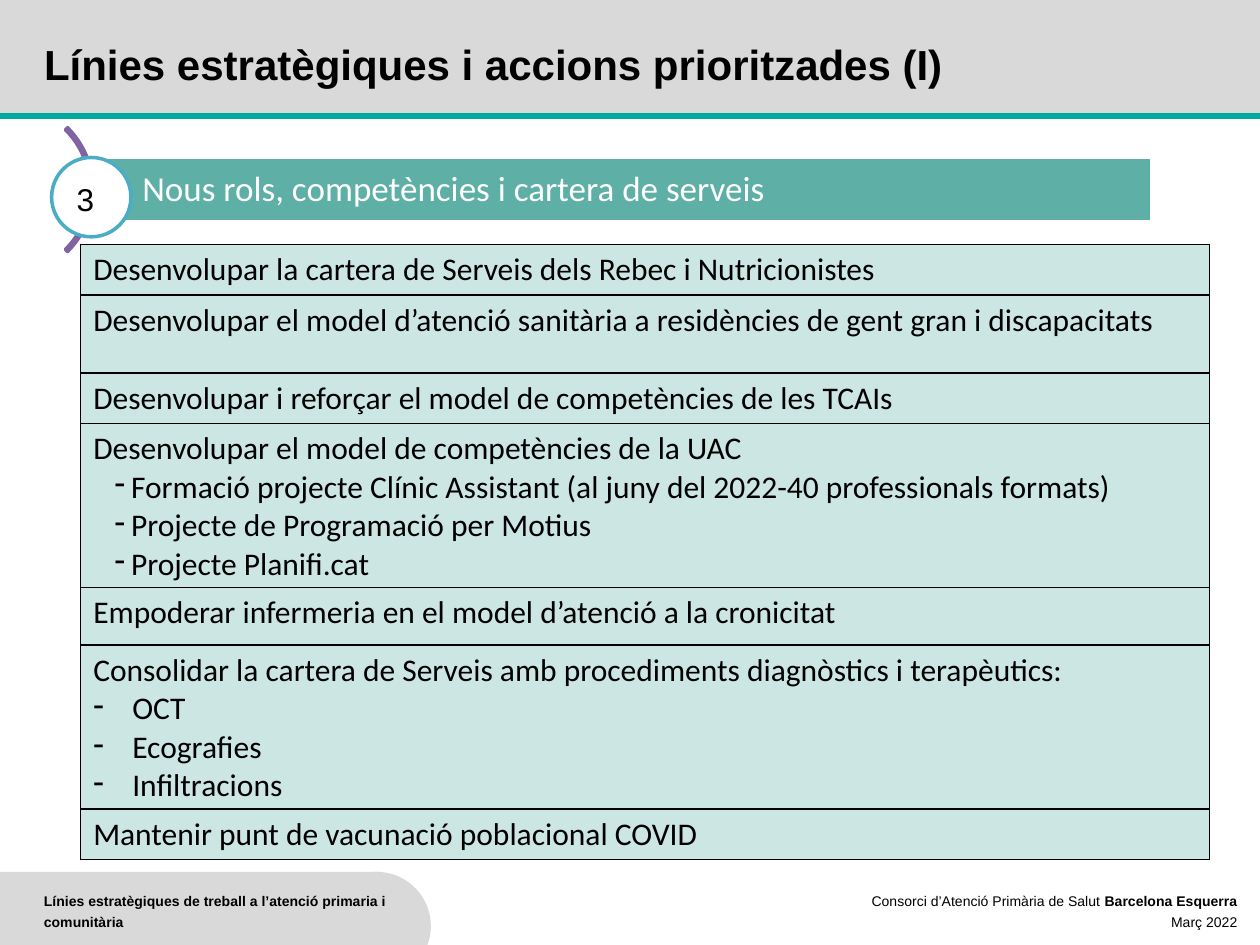
from lxml import etree
from pptx import Presentation
from pptx import util as u
from pptx.dml.color import RGBColor
from pptx.enum import shapes, text
from pptx.oxml import ns

theme = {
    "gray": "D9D9D9", "teal": "00AA9E", "bar": "5EAFA6", "cell": "CCE6E3",
    "arc": "8064A2", "ring": "4BACC6", "white": "FFFFFF", "black": "000000",
    "head": 24, "lead": 20, "body": 18, "foot": 8,
    "sans": "Arial", "text": "Calibri",
}
kind = shapes.MSO_SHAPE
align = text.PP_ALIGN


def draw(form, box, fill=None, line=None):
    shape = slide.shapes.add_shape(form, *map(u.Inches, box))
    shape.shadow.inherit = False
    for part, tone in ((shape.fill, fill), (shape.line.fill, line)):
        if tone:
            part.solid()
            part.fore_color.rgb = RGBColor.from_string(theme[tone])
        else:
            part.background()
    if line:
        shape.line.width = u.Pt(2)
    return shape


def write(para, runs, size, face="sans", tone="black", **form):
    for name, value in form.items():
        setattr(para, name, value)
    for words, bold in runs:
        run = para.add_run()
        run.text = words
        look = {"size": u.Pt(theme[size]), "name": theme[face], "bold": bold}
        for name, value in look.items():
            setattr(run.font, name, value)
        run.font.color.rgb = RGBColor.from_string(theme[tone])


deck = Presentation()
deck.slide_width, deck.slide_height = u.Inches(10), u.Inches(7.5)
slide = deck.slides.add_slide(deck.slide_layouts[5])

# Header and footer bands
draw(kind.RECTANGLE, (0, 6.92, 3.02, 0.72), "gray")
draw(kind.OVAL, (2.56, 6.92, 0.86, 0.86), "gray")
band = draw(kind.RECTANGLE, (0, 0, 10, 0.92), "gray")
rule = slide.shapes.add_connector(
    shapes.MSO_CONNECTOR.STRAIGHT, 0, u.Inches(0.92), u.Inches(10), u.Inches(0.92))
rule.line.width = u.Pt(3)
rule.line.color.rgb = RGBColor.from_string(theme["teal"])
etree.SubElement(rule._element.spPr, ns.qn("a:effectLst"))

# Footer texts
feet = [
    ((0.25, 7, 3.02, 0.47), align.LEFT, [
        [("Línies estratègiques de treball a l’atenció primaria i comunitària", True)]]),
    ((6.75, 7, 3.17, 0.5), align.RIGHT, [
        [("Consorci d’Atenció Primària de Salut ", False), ("Barcelona Esquerra", True)],
        [("Març 2022", False)]]),
]
for box, side, lines in feet:
    frame = slide.shapes.add_textbox(*map(u.Inches, box)).text_frame
    frame.word_wrap = True
    for i, runs in enumerate(lines):
        para = frame.add_paragraph() if i else frame.paragraphs[0]
        write(para, runs, "foot", alignment=side, line_spacing=u.Pt(12))

# Title, moved in front of the header band
title = slide.shapes.title
spots = {"left": 0.25, "top": 0.35, "width": 8.53, "height": 0.72}
for name, value in spots.items():
    setattr(title, name, u.Inches(value))
form = {"vertical_anchor": text.MSO_ANCHOR.TOP, "word_wrap": True,
        "auto_size": text.MSO_AUTO_SIZE.NONE}
for name, value in form.items():
    setattr(title.text_frame, name, value)
write(title.text_frame.paragraphs[0],
      [("Línies estratègiques i accions prioritzades (I)", True)],
      "head", alignment=align.LEFT, line_spacing=u.Pt(22))
band._element.addnext(title._element)

# Table of actions: row height, lead text, list items, list indent and hang
rows = [
    (0.4, "Desenvolupar la cartera de Serveis dels Rebec i Nutricionistes", [], 0, 0),
    (0.62, "Desenvolupar el model d’atenció sanitària a residències de gent gran "
           "i discapacitats", [], 0, 0),
    (0.4, "Desenvolupar i reforçar el model de competències de les TCAIs", [], 0, 0),
    (1.3, "Desenvolupar el model de competències de la UAC", [
        "Formació projecte Clínic Assistant (al juny del 2022-40 professionals formats)",
        "Projecte de Programació per Motius",
        "Projecte Planifi.cat"], 0.3, 0.13),
    (0.46, "Empoderar infermeria en el model d’atenció a la cronicitat", [], 0, 0),
    (1.3, "Consolidar la cartera de Serveis amb procediments diagnòstics i terapèutics:",
        ["OCT", "Ecografies", "Infiltracions"], 0.31, 0.31),
    (0.4, "Mantenir punt de vacunació poblacional COVID", [], 0, 0),
]
high = sum(row[0] for row in rows)
table = slide.shapes.add_table(
    len(rows), 1, *map(u.Inches, (0.64, 1.94, 8.96, high))).table
table.first_row = table.horz_banding = False
for i, (tall, lead, items, inset, hang) in enumerate(rows):
    table.rows[i].height = u.Inches(tall)
    cell = table.cell(i, 0)
    props = cell._tc.get_or_add_tcPr()
    for side in ("lnL", "lnR", "lnT", "lnB"):
        edge = etree.SubElement(props, ns.qn("a:" + side), w=str(u.Pt(1)))
        fill = etree.SubElement(edge, ns.qn("a:solidFill"))
        etree.SubElement(fill, ns.qn("a:srgbClr"), val=theme["black"])
    cell.fill.solid()
    cell.fill.fore_color.rgb = RGBColor.from_string(theme["cell"])
    frame = cell.text_frame
    write(frame.paragraphs[0], [(lead, False)], "body", "text")
    for item in items:
        para = frame.add_paragraph()
        props = para._p.get_or_add_pPr()
        props.set("marL", str(u.Inches(inset)))
        props.set("indent", str(-u.Inches(hang)))
        etree.SubElement(props, ns.qn("a:buChar"), char="-")
        write(para, [(item, False)], "body", "text")

# Numbered heading: arc, bar, circle
arc = draw(kind.BLOCK_ARC, (-0.65, 0.81, 1.39, 1.39), line="arc")
for i, value in enumerate((189, 27, 0.017)):
    arc.adjustments[i] = value
bar = draw(kind.RECTANGLE, (0.72, 1.25, 8.42, 0.51), "bar", "white")
frame = bar.text_frame
pads = {"margin_left": 0.41, "margin_top": 0.06, "margin_right": 0.06,
        "margin_bottom": 0.06}
for name, value in pads.items():
    setattr(frame, name, u.Inches(value))
frame.vertical_anchor = text.MSO_ANCHOR.MIDDLE
write(frame.paragraphs[0], [("Nous rols, competències i cartera de serveis", False)],
      "lead", "text", "white", alignment=align.LEFT, line_spacing=0.9)
draw(kind.OVAL, (0.41, 1.25, 0.63, 0.63), "white", "ring")
label = slide.shapes.add_textbox(*map(u.Inches, (0.51, 1.38, 0.41, 0.4)))
label.text_frame.word_wrap = True
write(label.text_frame.paragraphs[0], [("3", False)], "body")

deck.save("out.pptx")
